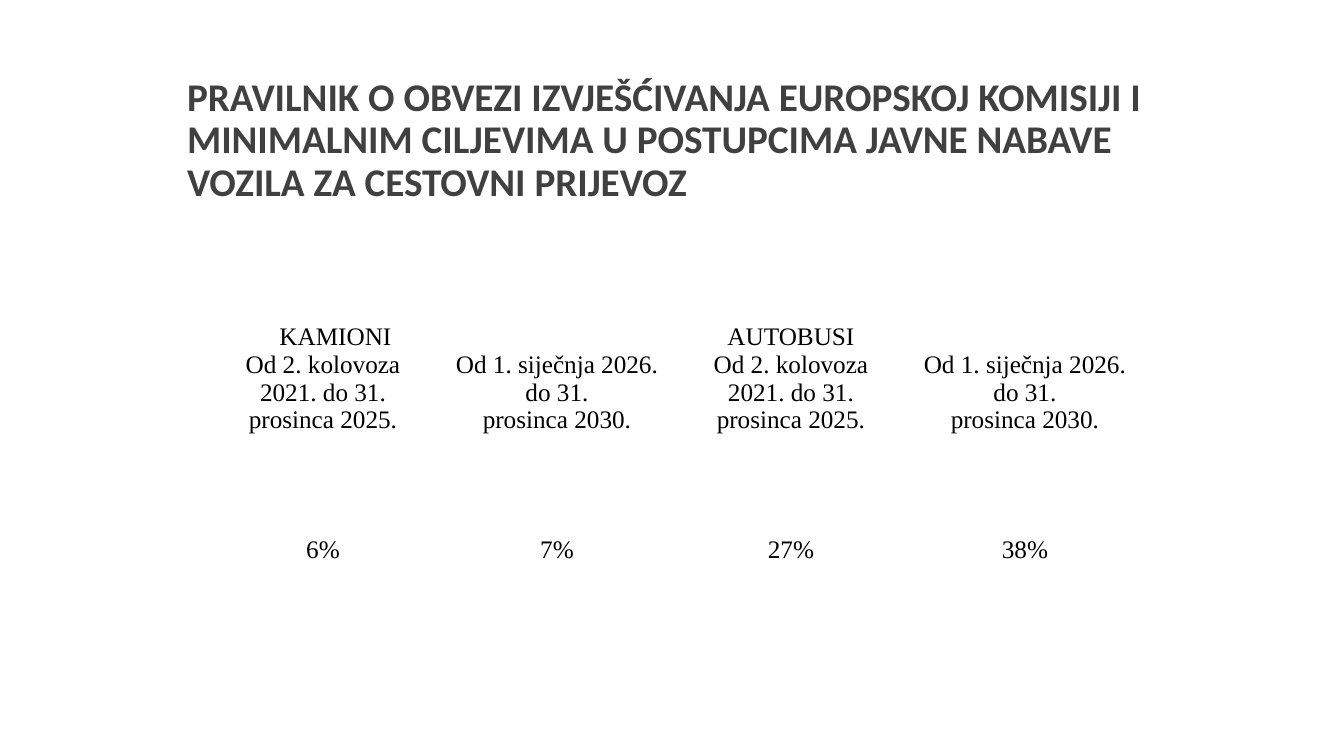
from lxml import etree
from pptx import Presentation
from pptx import util as u
from pptx.dml.color import RGBColor
from pptx.enum import text
from pptx.oxml.ns import qn

# Content
TITLE = ("PRAVILNIK O OBVEZI IZVJEŠĆIVANJA EUROPSKOJ KOMISIJI I MINIMALNIM "
         "CILJEVIMA U POSTUPCIMA JAVNE NABAVE VOZILA ZA CESTOVNI PRIJEVOZ")
FIRST = ("Od 2. kolovoza 2021. do 31.", "prosinca 2025.")
SECOND = ("Od 1. siječnja 2026. do 31.", "prosinca 2030.")
# Vehicle heading, indent of the heading, period, target
TARGETS = [
    ("KAMIONI", 25, FIRST, "6%"),
    ("", 0, SECOND, "7%"),
    ("AUTOBUSI", 0, FIRST, "27%"),
    ("", 0, SECOND, "38%"),
]

# Layout
TITLE_BOX = (177, 86, 1051, 110)
TABLE_LEFT, TABLE_TOP, COL_W = 206, 237, 234
ROW_H = (283, 59)
PAD, LINE_H = 5, 28


def px(n):
    return u.Emu(round(n * 914400 / 100.8))


def rgb(color):
    return RGBColor.from_string(color)


def add_run(p, words, font, size, color, bold=False):
    r = p.add_run()
    r.text = words
    r.font.name, r.font.size, r.font.bold = font, u.Pt(size), bold
    r.font.color.rgb = rgb(color)


def add_lines(p, lines, indent=0):
    p.alignment = text.PP_ALIGN.CENTER
    if indent:
        p._p.get_or_add_pPr().set("marL", str(px(indent)))
    for i, line in enumerate(lines):
        if i:
            p.add_line_break()
        add_run(p, line, "Times New Roman", 18, "000000")


def style_cell(cell):
    cell.vertical_anchor = text.MSO_ANCHOR.MIDDLE
    cell.margin_top = cell.margin_bottom = px(PAD)
    tcPr = cell._tc.get_or_add_tcPr()
    for side in ("a:lnL", "a:lnR", "a:lnT", "a:lnB"):
        ln = etree.SubElement(tcPr, qn(side), w=str(u.Pt(0.6)))
        fill = etree.SubElement(ln, qn("a:solidFill"))
        etree.SubElement(fill, qn("a:srgbClr"), val="FFFFFF")
    cell.fill.solid()
    cell.fill.fore_color.rgb = rgb("FFFFFF")


prs = Presentation()
prs.slide_width, prs.slide_height = px(1344), px(756)
s = prs.slides.add_slide(prs.slide_layouts[5])

# Title
sp = s.shapes.title
sp.left, sp.top, sp.width, sp.height = map(px, TITLE_BOX)
tf = sp.text_frame
tf.word_wrap = True
tf.auto_size = text.MSO_AUTO_SIZE.NONE
tf.vertical_anchor = text.MSO_ANCHOR.MIDDLE
p = tf.paragraphs[0]
p.alignment = text.PP_ALIGN.LEFT
p.line_spacing = 0.9
add_run(p, TITLE, "Calibri", 28, "404040", True)

# Table of targets
tbl = s.shapes.add_table(2, len(TARGETS), px(TABLE_LEFT), px(TABLE_TOP),
                         px(COL_W * len(TARGETS)), px(sum(ROW_H))).table
for row, height in zip(tbl.rows, ROW_H):
    row.height = px(height)
for c, (vehicle, indent, period, target) in enumerate(TARGETS):
    tbl.columns[c].width = px(COL_W)
    head, value = tbl.cell(0, c), tbl.cell(1, c)
    style_cell(head)
    style_cell(value)
    p = head.text_frame.paragraphs[0]
    if vehicle:
        add_lines(p, [vehicle], indent)
        p = head.text_frame.add_paragraph()
    else:
        # Keeps the periods level across the row
        head.margin_top = px(PAD + LINE_H)
    add_lines(p, period)
    add_lines(value.text_frame.paragraphs[0], [target])

prs.save("out.pptx")
